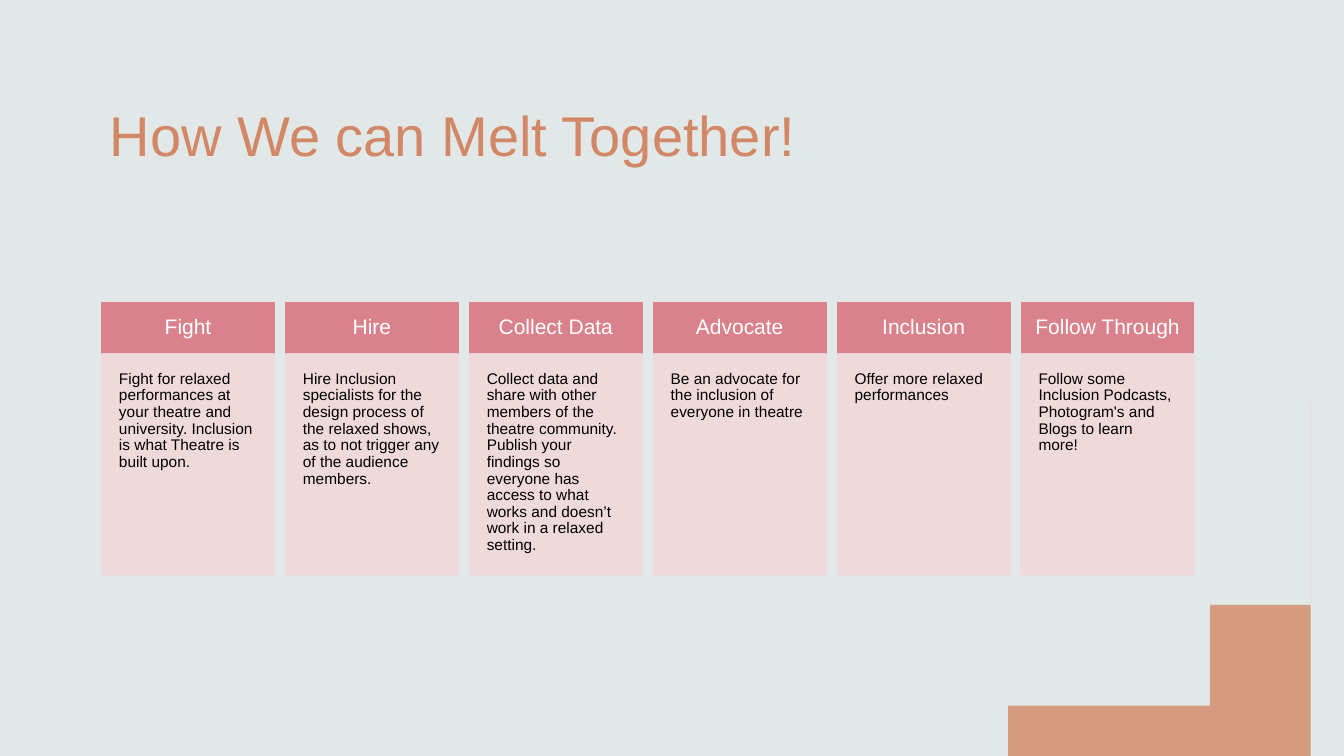
"""Build a slide of six headed cards on ways to make theatre inclusive."""
from dataclasses import dataclass

import pptx
import pptx.dml.color
import pptx.enum.shapes
import pptx.enum.text
import pptx.oxml
import pptx.oxml.ns
import pptx.util
from pptx.dml.color import RGBColor

MIST = RGBColor(0xE2, 0xE8, 0xE7)
CLAY = RGBColor(0xD2, 0x88, 0x66)
ROSE = RGBColor(0xDA, 0x82, 0x8B)
BLUSH = RGBColor(0xF1, 0xD8, 0xDA)
WHITE = RGBColor(0xFF, 0xFF, 0xFF)
BLACK = RGBColor(0x00, 0x00, 0x00)
FONT = "Arial"
WIDTH, HEIGHT = 13.33, 7.5
CURVE = ((9.68, 7.5), (11.58, 7.5), (13.15, 6.02), (13.33, 4.13))
STEPS = 60


@dataclass(frozen=True)
class Grid:
    """Equal columns spread between two edges, in inches."""
    left: float
    right: float
    count: int
    col: float

    def x(self, i: int) -> float:
        """Return the left edge of column i."""
        return self.left + i * (self.right - self.left - self.col) / (self.count - 1)


@dataclass(frozen=True)
class Row:
    """One band of the cards with its look."""
    top: float
    height: float
    inset: float
    size: float
    fill: RGBColor
    ink: RGBColor
    alpha: int
    align: pptx.enum.text.PP_ALIGN
    anchor: pptx.enum.text.MSO_ANCHOR


@dataclass(frozen=True)
class Card:
    """A heading and the advice under it."""
    head: str
    body: str


HEAD = Row(3, 0.51, 0.13, 15, ROSE, WHITE, 100,
           pptx.enum.text.PP_ALIGN.CENTER, pptx.enum.text.MSO_ANCHOR.MIDDLE)
BODY = Row(3.51, 2.19, 0.17, 11, BLUSH, BLACK, 90,
           pptx.enum.text.PP_ALIGN.LEFT, pptx.enum.text.MSO_ANCHOR.TOP)
CARDS = (
    Card("Fight", "Fight for relaxed performances at your theatre and university. "
         "Inclusion is what Theatre is built upon."),
    Card("Hire", "Hire Inclusion specialists for the design process of the relaxed "
         "shows, as to not trigger any of the audience members."),
    Card("Collect Data", "Collect data and share with other members of the theatre "
         "community. Publish your findings so everyone has access to what works and "
         "doesn’t work in a relaxed setting."),
    Card("Advocate", "Be an advocate for the inclusion of everyone in theatre"),
    Card("Inclusion", "Offer more relaxed performances"),
    Card("Follow Through", "Follow some Inclusion Podcasts, Photogram's and Blogs "
         "to learn more!"),
)
GRID = Grid(1.01, 11.84, len(CARDS), 1.71)


def set_alpha(sp: pptx.shapes.base.BaseShape, percent: int) -> None:
    """Make the fill and line of a shape partly see-through."""
    for clr in sp._element.spPr.iter(pptx.oxml.ns.qn("a:srgbClr")):
        alpha = pptx.oxml.parse_xml(
            f'<a:alpha {pptx.oxml.ns.nsdecls("a")} val="{percent * 1000}"/>')
        clr.append(alpha)


def add_text(p: pptx.text.text._Paragraph, text: str, size: float,
             color: RGBColor) -> None:
    """Add one formatted run to a paragraph."""
    r = p.add_run()
    r.text = text
    r.font.name = FONT
    r.font.size = pptx.util.Pt(size)
    r.font.color.rgb = color


def add_title(s: pptx.slide.Slide, text: str) -> None:
    """Place and fill the title placeholder."""
    sp = s.shapes.title
    sp.left, sp.top, sp.width, sp.height = map(
        pptx.util.Inches, (0.99, 0.65, 10.84, 1.45))
    tf = sp.text_frame
    tf.vertical_anchor = pptx.enum.text.MSO_ANCHOR.MIDDLE
    p = tf.paragraphs[0]
    p.alignment = pptx.enum.text.PP_ALIGN.LEFT
    p.line_spacing = 0.9
    add_text(p, text, 40, CLAY)


def curve_point(t: float) -> tuple[float, float]:
    """Return the point at share t of the cubic corner curve."""
    weights = ((1 - t) ** 3, 3 * t * (1 - t) ** 2, 3 * t ** 2 * (1 - t), t ** 3)
    x, y = (sum(w * c for w, c in zip(weights, axis)) for axis in zip(*CURVE))
    return x, y


def add_corner(s: pptx.slide.Slide) -> None:
    """Draw the curved wedge in the lower right corner."""
    points = [curve_point(i / STEPS) for i in range(STEPS + 1)]
    points += [(WIDTH, 4.08), (WIDTH, HEIGHT)]
    fb = s.shapes.build_freeform(*points[0], scale=pptx.util.Inches(1))
    fb.add_line_segments(points[1:], close=True)
    sp = fb.convert_to_shape()
    sp.shadow.inherit = False
    sp.fill.solid()
    sp.fill.fore_color.rgb = CLAY
    sp.line.fill.background()
    set_alpha(sp, 80)


def add_cell(s: pptx.slide.Slide, col: int, row: Row, text: str) -> None:
    """Draw one band of a card with its text."""
    box = map(pptx.util.Inches, (GRID.x(col), row.top, GRID.col, row.height))
    sp = s.shapes.add_shape(pptx.enum.shapes.MSO_SHAPE.RECTANGLE, *box)
    sp.shadow.inherit = False
    sp.fill.solid()
    sp.fill.fore_color.rgb = row.fill
    sp.line.color.rgb = row.fill
    sp.line.width = pptx.util.Pt(1)
    if row.alpha < 100:
        set_alpha(sp, row.alpha)
    tf = sp.text_frame
    tf.word_wrap = True
    tf.vertical_anchor = row.anchor
    inset = pptx.util.Inches(row.inset)
    tf.margin_left = tf.margin_top = tf.margin_right = tf.margin_bottom = inset
    p = tf.paragraphs[0]
    p.alignment = row.align
    p.line_spacing = 0.9
    add_text(p, text, row.size, row.ink)


def main() -> None:
    """Build and save the slide."""
    prs = pptx.Presentation()
    prs.slide_width = pptx.util.Inches(WIDTH)
    prs.slide_height = pptx.util.Inches(HEIGHT)
    s = prs.slides.add_slide(prs.slide_layouts.get_by_name("Title Only"))
    s.background.fill.solid()
    s.background.fill.fore_color.rgb = MIST
    add_corner(s)
    add_title(s, "How We can Melt Together!")
    for col, card in enumerate(CARDS):
        add_cell(s, col, HEAD, card.head)
        add_cell(s, col, BODY, card.body)
    prs.save("out.pptx")


if __name__ == "__main__":
    main()
